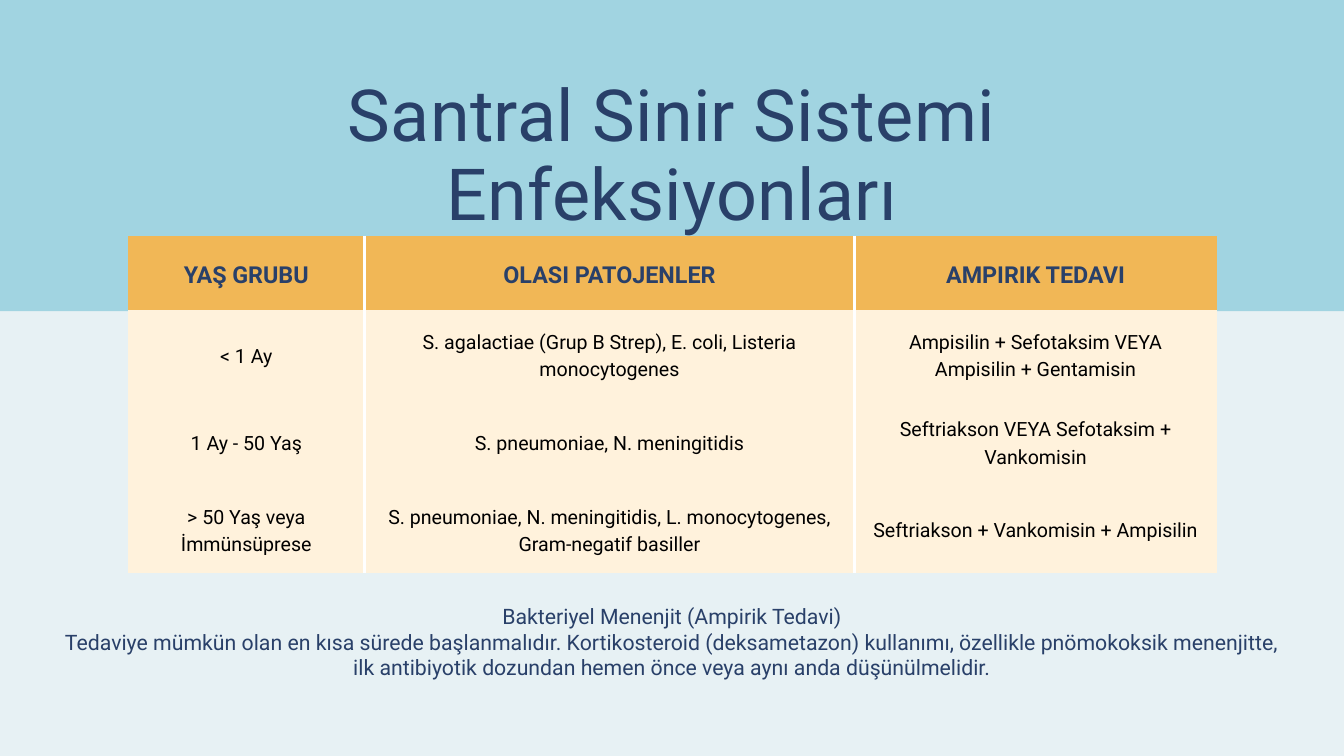
from lxml import etree
from pptx import Presentation
from pptx.dml.color import RGBColor
from pptx.enum.shapes import MSO_SHAPE
from pptx.enum.text import MSO_ANCHOR, MSO_AUTO_SIZE, PP_ALIGN
from pptx.oxml.ns import qn
from pptx.util import Inches, Pt

RECTANGLE = MSO_SHAPE.RECTANGLE
TOP, MIDDLE = MSO_ANCHOR.TOP, MSO_ANCHOR.MIDDLE
CENTER = PP_ALIGN.CENTER
GROW = MSO_AUTO_SIZE.SHAPE_TO_FIT_TEXT
TITLE_ONLY = 5
FONT = "Roboto"
COLORS = {
    "background": "E7F1F4",
    "band": "A1D4E1",
    "header": "F1B756",
    "body": "FFF2DC",
    "navy": "294069",
    "black": "000000",
    "divider": "FFFFFF",
}
COLUMN_WIDTHS = [3.53, 7.28, 5.4]
ROW_HEIGHTS = [1.11, 1.3, 1.3, 1.3]
TREATMENTS = [
    ["YAŞ GRUBU", "OLASI PATOJENLER", "AMPIRIK TEDAVI"],
    ["< 1 Ay", "S. agalactiae (Grup B Strep), E. coli, Listeria monocytogenes",
     "Ampisilin + Sefotaksim VEYA Ampisilin + Gentamisin"],
    ["1 Ay - 50 Yaş", "S. pneumoniae, N. meningitidis",
     "Seftriakson VEYA Sefotaksim + Vankomisin"],
    ["> 50 Yaş veya İmmünsüprese",
     "S. pneumoniae, N. meningitidis, L. monocytogenes, Gram-negatif basiller",
     "Seftriakson + Vankomisin + Ampisilin"],
]
NOTE = (
    "Bakteriyel Menenjit (Ampirik Tedavi)\n"
    "Tedaviye mümkün olan en kısa sürede başlanmalıdır. Kortikosteroid "
    "(deksametazon) kullanımı, özellikle pnömokoksik menenjitte, ilk antibiyotik "
    "dozundan hemen önce veya aynı anda düşünülmelidir."
)


class SlideBuilder:
    """Holds the slide and its style, and adds each kind of element."""

    def __init__(self, presentation):
        self.slide = presentation.slides.add_slide(presentation.slide_layouts[TITLE_ONLY])
        self.paint(self.slide.background.fill, "background")

    def paint(self, fill, color):
        fill.solid()
        fill.fore_color.rgb = RGBColor.from_string(COLORS[color])

    def set_text(self, text_frame, text, size, leading, color="navy", bold=False, spacing=0):
        text_frame.text = text
        for paragraph in text_frame.paragraphs:
            paragraph.alignment = CENTER
            paragraph.line_spacing = Pt(leading)
            paragraph.space_before = paragraph.space_after = Pt(0)
            for run in paragraph.runs:
                run.font.name = FONT
                run.font.size = Pt(size)
                run.font.bold = bold
                run.font.color.rgb = RGBColor.from_string(COLORS[color])
                if spacing:
                    run._r.get_or_add_rPr().set("spc", str(round(spacing * 100)))

    def frame(self, text_frame):
        text_frame.margin_left = text_frame.margin_right = 0
        text_frame.margin_top = text_frame.margin_bottom = 0
        text_frame.vertical_anchor = TOP
        text_frame.word_wrap = True
        text_frame.auto_size = GROW

    def band(self, left, top, width, height):
        shape = self.slide.shapes.add_shape(
            RECTANGLE, Inches(left), Inches(top), Inches(width), Inches(height))
        shape.shadow.inherit = False
        shape.line.fill.background()
        self.paint(shape.fill, "band")

    def title(self, text, left, top, width, height):
        shape = self.slide.shapes.title
        shape.left, shape.top = Inches(left), Inches(top)
        shape.width, shape.height = Inches(width), Inches(height)
        self.frame(shape.text_frame)
        self.set_text(shape.text_frame, text, 77, 84.7, spacing=0.4)
        shape.element.getparent().append(shape.element)

    def note(self, text, left, top, width, height):
        shape = self.slide.shapes.add_textbox(
            Inches(left), Inches(top), Inches(width), Inches(height))
        self.frame(shape.text_frame)
        self.set_text(shape.text_frame, text, 22.8, 27.4)

    def borders(self, cell, divided_sides):
        properties = cell._tc.get_or_add_tcPr()
        for side in "LRTB":
            line = etree.SubElement(properties, qn(f"a:ln{side}"))
            if side in divided_sides:
                line.set("w", str(Pt(3.75)))
                fill = etree.SubElement(line, qn("a:solidFill"))
                etree.SubElement(fill, qn("a:srgbClr"), val=COLORS["divider"])
            else:
                line.set("w", "0")
                etree.SubElement(line, qn("a:noFill"))

    def table(self, rows, left, top):
        table = self.slide.shapes.add_table(
            len(rows), len(COLUMN_WIDTHS), Inches(left), Inches(top),
            Inches(sum(COLUMN_WIDTHS)), Inches(sum(ROW_HEIGHTS))).table
        table.first_row = table.horz_banding = False
        for column, width in zip(table.columns, COLUMN_WIDTHS):
            column.width = Inches(width)
        for row, height in zip(table.rows, ROW_HEIGHTS):
            row.height = Inches(height)
        for row_index, texts in enumerate(rows):
            for column_index, text in enumerate(texts):
                cell = table.cell(row_index, column_index)
                self.borders(cell, ("R", "LR", "L")[column_index])
                cell.margin_left = cell.margin_right = Inches(0.21)
                cell.margin_top = cell.margin_bottom = Inches(0.21)
                cell.vertical_anchor = MIDDLE
                if row_index == 0:
                    self.paint(cell.fill, "header")
                    self.set_text(cell.text_frame, text, 25, 35, bold=True)
                else:
                    self.paint(cell.fill, "body")
                    self.set_text(cell.text_frame, text, 21, 29.4, "black")


def main():
    presentation = Presentation()
    presentation.slide_width = Inches(20)
    presentation.slide_height = Inches(11.25)
    builder = SlideBuilder(presentation)
    builder.band(0, 0, 20, 4.63)
    builder.table(TREATMENTS, 1.9, 3.51)
    builder.title("Santral Sinir Sistemi Enfeksiyonları", 1.9, 1.14, 16.21, 1.19)
    builder.note(NOTE, 0.79, 8.98, 18.42, 1.13)
    presentation.save("out.pptx")


if __name__ == "__main__":
    main()
